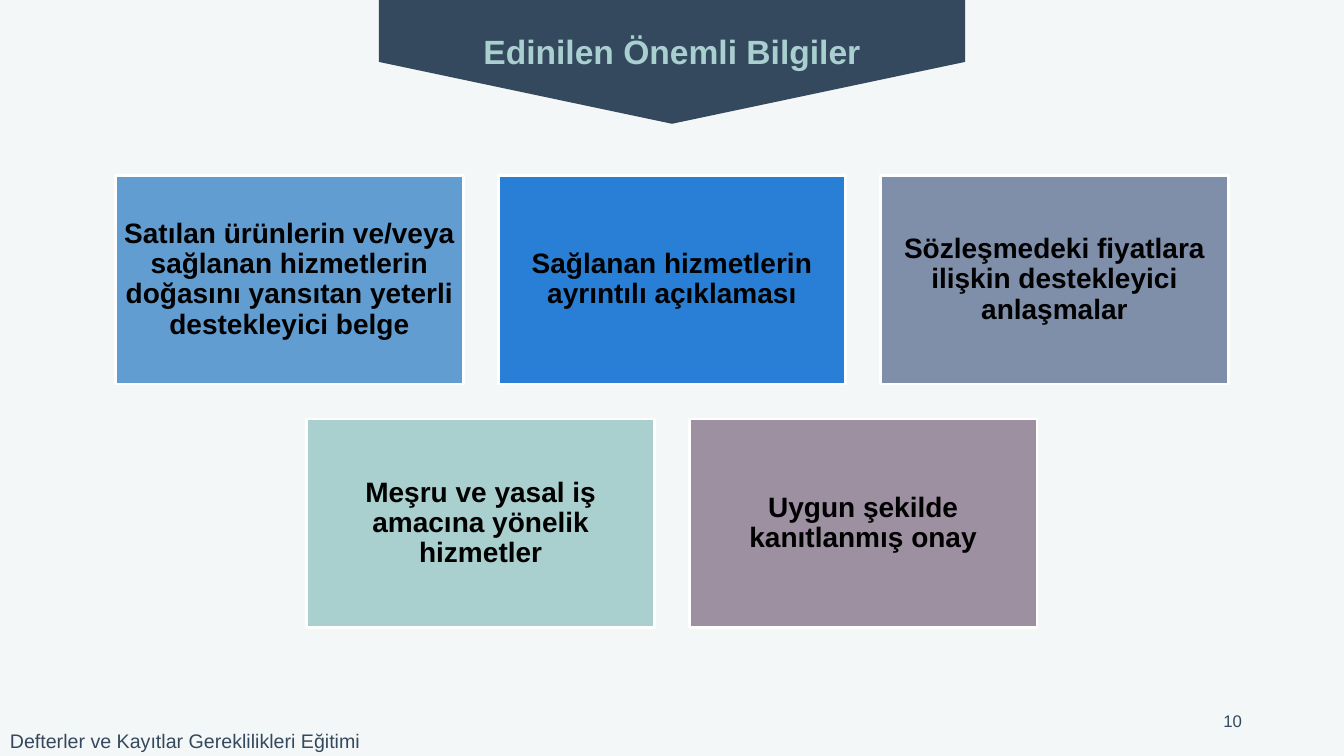
import pptx
import pptx.dml.color
import pptx.enum.shapes
import pptx.enum.text
import pptx.util

Cm = pptx.util.Cm
Pt = pptx.util.Pt
RGBColor = pptx.dml.color.RGBColor
Align = pptx.enum.text.PP_ALIGN
Anchor = pptx.enum.text.MSO_ANCHOR
Preset = pptx.enum.shapes.MSO_SHAPE

PAPER = RGBColor(0xF4, 0xF7, 0xF7)
NAVY = RGBColor(0x34, 0x49, 0x5E)
MINT = RGBColor(0xAA, 0xCF, 0xD0)
WHITE = RGBColor(0xFF, 0xFF, 0xFF)
BLACK = RGBColor(0x00, 0x00, 0x00)
SKY = RGBColor(0x62, 0x9D, 0xD1)
BLUE = RGBColor(0x29, 0x7F, 0xD5)
SLATE = RGBColor(0x7F, 0x8F, 0xA9)
SEAFOAM = RGBColor(0xAA, 0xCF, 0xCF)
MAUVE = RGBColor(0x9D, 0x90, 0xA0)

PAGE_WIDTH, PAGE_HEIGHT = Cm(33.87), Cm(19.05)
CARD_WIDTH, CARD_HEIGHT, CARD_GAP = Cm(8.76), Cm(5.26), Cm(0.88)

TITLE_FORMAT = {"size": Pt(24), "bold": True}
CARD_FORMAT = {"size": Pt(20), "bold": True}
FOOTER_FORMAT = {"size": Pt(14), "bold": False}
NUMBER_FORMAT = {"size": Pt(12), "bold": False}

CARD_ROWS = [
    [
        ("Satılan ürünlerin ve/veya sağlanan hizmetlerin doğasını "
         "yansıtan yeterli destekleyici belge", SKY),
        ("Sağlanan hizmetlerin ayrıntılı açıklaması", BLUE),
        ("Sözleşmedeki fiyatlara ilişkin destekleyici anlaşmalar", SLATE),
    ],
    [
        ("Meşru ve yasal iş amacına yönelik hizmetler", SEAFOAM),
        ("Uygun şekilde kanıtlanmış onay", MAUVE),
    ],
]


def write_text(shape, text, color, font_format, align, anchor, margins=None):
    """Fill a shape with one formatted paragraph and return that paragraph."""
    frame = shape.text_frame
    frame_format = {
        "word_wrap": True,
        "auto_size": pptx.enum.text.MSO_AUTO_SIZE.NONE,
        "vertical_anchor": anchor,
        **(margins or {}),
    }
    for name, value in frame_format.items():
        setattr(frame, name, value)
    para = frame.paragraphs[0]
    para.alignment = align
    span = para.add_run()
    span.text = text
    span.font.color.rgb = color
    for name, value in {"name": "Arial", **font_format}.items():
        setattr(span.font, name, value)
    return para


def add_filled_shape(page, preset, box, fill):
    shape = page.shapes.add_shape(preset, *box)
    shape.shadow.inherit = False
    shape.fill.solid()
    shape.fill.fore_color.rgb = fill
    return shape


def add_banner(page, left, top, width, height):
    """Place a downward pennant in the box, with the title in front of it."""
    turned_box = (left + (width - height) // 2, top + (height - width) // 2,
                  height, width)
    pennant = add_filled_shape(page, Preset.PENTAGON, turned_box, NAVY)
    pennant.rotation = 90
    pennant.adjustments[0] = 0.5
    pennant.line.fill.background()

    title = page.shapes.title
    overhang = Cm(2)
    title_box = {"left": left - overhang, "top": top + Cm(0.64),
                 "width": width + 2 * overhang, "height": Cm(1.27)}
    for name, value in title_box.items():
        setattr(title, name, value)
    write_text(title, "Edinilen Önemli Bilgiler", MINT, TITLE_FORMAT,
               Align.CENTER, Anchor.TOP)
    pennant.element.addnext(title.element)


def add_card(page, box, text, fill):
    card = add_filled_shape(page, Preset.RECTANGLE, box, fill)
    card.line.color.rgb = WHITE
    card.line.width = Pt(2)
    margins = {f"margin_{side}": Cm(0.2)
               for side in ("left", "top", "right", "bottom")}
    para = write_text(card, text, BLACK, CARD_FORMAT, Align.CENTER,
                      Anchor.MIDDLE, margins)
    para.line_spacing = 0.9


def add_card_rows(page, left, top, width):
    """Stack the rows of cards, each row centred in the given width."""
    for row_index, row in enumerate(CARD_ROWS):
        row_width = len(row) * (CARD_WIDTH + CARD_GAP) - CARD_GAP
        row_left = left + (width - row_width) // 2
        row_top = top + row_index * (CARD_HEIGHT + CARD_GAP)
        for column, (text, fill) in enumerate(row):
            card_left = row_left + column * (CARD_WIDTH + CARD_GAP)
            add_card(page, (card_left, row_top, CARD_WIDTH, CARD_HEIGHT),
                     text, fill)


def add_footer(page, left, top, width, height):
    """Place the course name at bottom left and the page number at right."""
    course = page.shapes.add_textbox(left, top + height - Cm(0.81),
                                     Cm(10.6), Cm(0.86))
    write_text(course, "Defterler ve Kayıtlar Gereklilikleri Eğitimi", NAVY,
               FOOTER_FORMAT, Align.LEFT, Anchor.TOP)
    number = page.shapes.add_textbox(left + width - Cm(9.94), top,
                                     Cm(7.62), Cm(1.02))
    write_text(number, "10", NAVY, NUMBER_FORMAT, Align.RIGHT, Anchor.MIDDLE)


def main():
    deck = pptx.Presentation()
    deck.slide_width, deck.slide_height = PAGE_WIDTH, PAGE_HEIGHT
    page = deck.slides.add_slide(deck.slide_layouts.get_by_name("Title Only"))
    page.background.fill.solid()
    page.background.fill.fore_color.rgb = PAPER

    banner_width = Cm(14.78)
    add_banner(page, (PAGE_WIDTH - banner_width) // 2, 0, banner_width, Cm(3.12))
    add_card_rows(page, 0, Cm(4.42), PAGE_WIDTH)
    footer_height = Cm(1.4)
    add_footer(page, 0, PAGE_HEIGHT - footer_height, PAGE_WIDTH, footer_height)
    deck.save("out.pptx")


if __name__ == "__main__":
    main()
